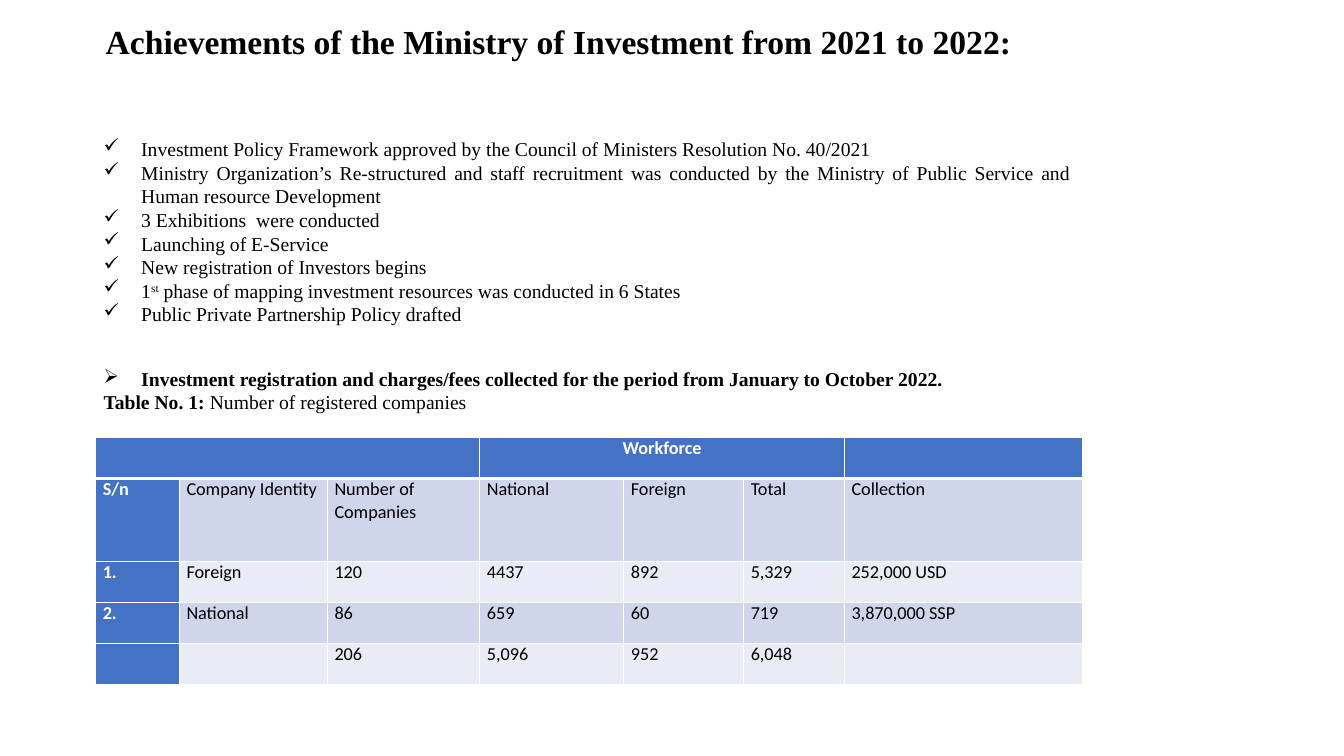
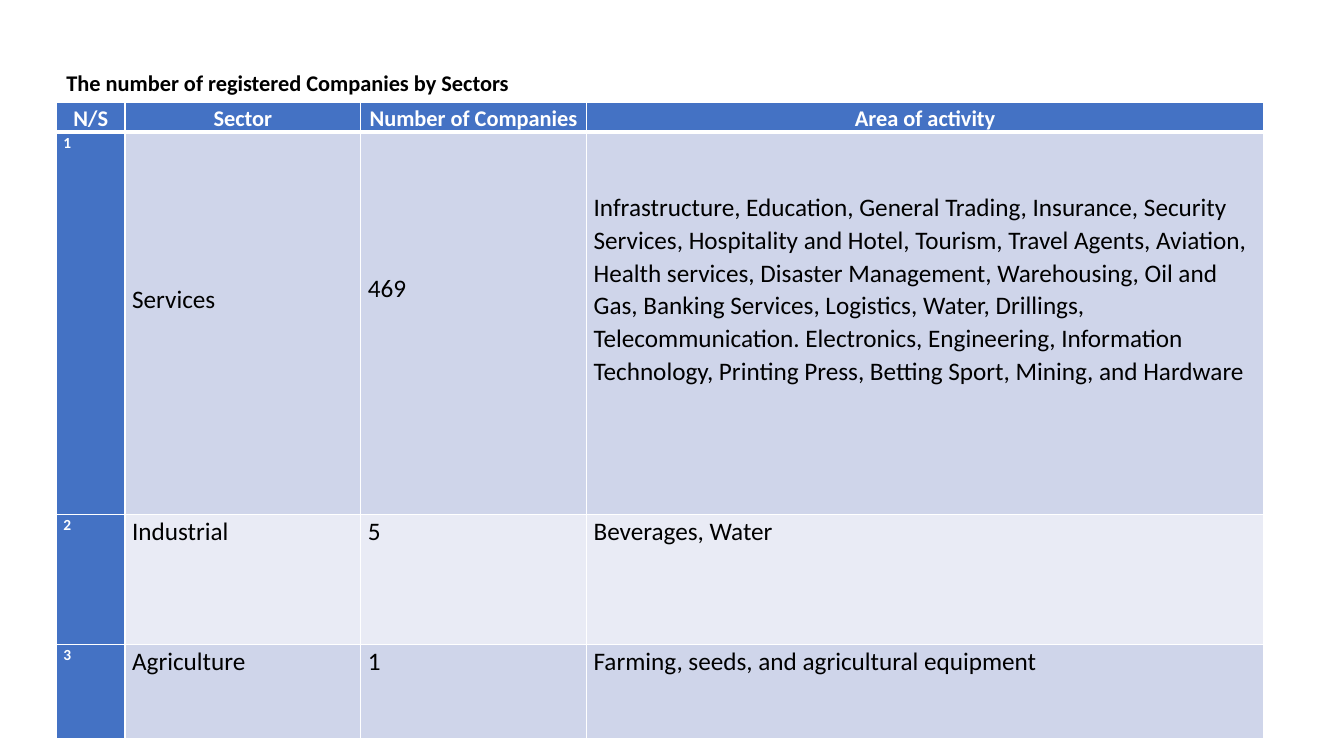
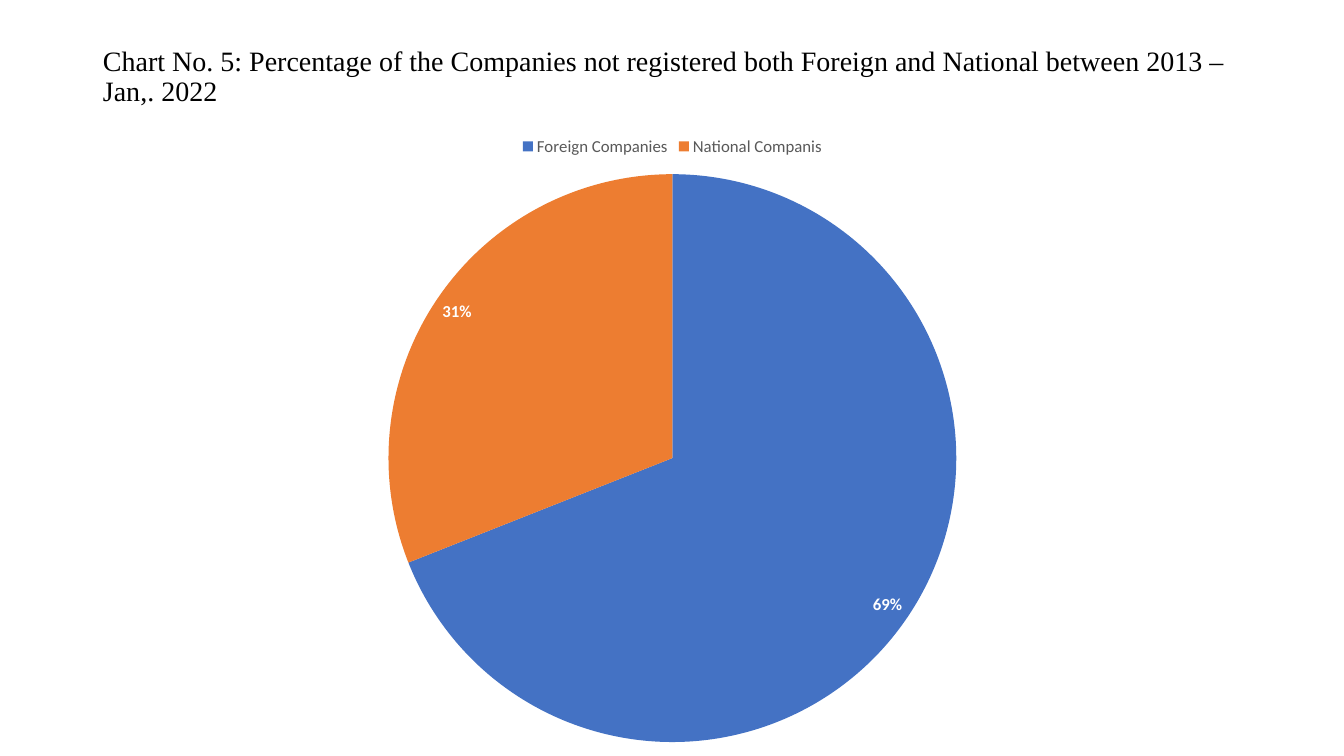
from lxml import etree
from pptx import Presentation
from pptx.chart.data import CategoryChartData
from pptx.dml.color import RGBColor
from pptx.enum.chart import XL_CHART_TYPE, XL_LABEL_POSITION, XL_LEGEND_POSITION
from pptx.enum.text import MSO_ANCHOR, MSO_AUTO_SIZE, PP_ALIGN
from pptx.oxml.ns import qn
from pptx.util import Cm, Pt

LEFT, CENTER, JUSTIFY = PP_ALIGN.LEFT, PP_ALIGN.CENTER, PP_ALIGN.JUSTIFY
TOP, MIDDLE = MSO_ANCHOR.TOP, MSO_ANCHOR.MIDDLE
NO_AUTOFIT = MSO_AUTO_SIZE.NONE
PIE = XL_CHART_TYPE.PIE
LEGEND_TOP = XL_LEGEND_POSITION.TOP
INSIDE_END = XL_LABEL_POSITION.INSIDE_END

SERIF, SANS = "Times New Roman", "Calibri"
BLACK, WHITE, GRAY = "000000", "FFFFFF", "595959"
BLUE, ORANGE = "4472C4", "ED7D31"
BANDS = ("CFD5EA", "E9EBF5")
TITLE_ONLY = 5
CHECK, ARROW = "✓", "➢"


def color(value):
    return RGBColor.from_string(value)


def style_font(font, size, name=SANS, fill=BLACK, bold=False):
    font.size = Pt(size)
    font.name = name
    font.bold = bold
    font.color.rgb = color(fill)


def add_bullet(paragraph, symbol):
    """Give the paragraph a hanging indent and a symbol bullet."""
    properties = paragraph._p.get_or_add_pPr()
    properties.set("marL", str(Cm(0.95)))
    properties.set("indent", str(-Cm(0.95)))
    etree.SubElement(properties, qn("a:buChar"), char=symbol)


def add_border(cell, side, width):
    line = etree.SubElement(cell._tc.get_or_add_tcPr(), qn(f"a:ln{side}"), w=str(Pt(width)))
    fill = etree.SubElement(line, qn("a:solidFill"))
    etree.SubElement(fill, qn("a:srgbClr"), val=WHITE)


class Deck:
    """Shared style and the slide being built."""

    def __init__(self):
        self.presentation = Presentation()
        self.presentation.slide_width = Cm(33.87)
        self.presentation.slide_height = Cm(19.05)
        self.slide = None

    def add_slide(self, title, box, size, name=SERIF, bold=False):
        layout = self.presentation.slide_layouts[TITLE_ONLY]
        self.slide = self.presentation.slides.add_slide(layout)
        shape = self.slide.shapes.title
        shape.left, shape.top, shape.width, shape.height = map(Cm, box)
        text_frame = shape.text_frame
        text_frame.text = title
        text_frame.word_wrap = True
        text_frame.auto_size = NO_AUTOFIT
        text_frame.vertical_anchor = MIDDLE
        paragraph = text_frame.paragraphs[0]
        paragraph.alignment = LEFT
        paragraph.line_spacing = 0.9
        style_font(paragraph.runs[0].font, size, name, bold=bold)

    def add_text(self, box, items, size):
        """Each item is (bullet, alignment, space before, runs of (text, bold, baseline))."""
        text_frame = self.slide.shapes.add_textbox(*map(Cm, box)).text_frame
        text_frame.word_wrap = True
        text_frame.vertical_anchor = MIDDLE
        for index, (bullet, alignment, space, runs) in enumerate(items):
            paragraph = text_frame.add_paragraph() if index else text_frame.paragraphs[0]
            paragraph.alignment = alignment
            paragraph.space_before = Pt(space)
            if bullet:
                add_bullet(paragraph, bullet)
            for text, bold, baseline in runs:
                run = paragraph.add_run()
                run.text = text
                style_font(run.font, size, SERIF, bold=bold)
                if baseline:
                    run._r.get_or_add_rPr().set("baseline", str(baseline * 1000))

    def add_table(self, corner, widths, heights, rows, sizes, spacing=1.0, offsets=None):
        """sizes holds the header, first column and body text sizes;
        offsets maps (row, column) to a top margin in cm."""
        left, top = map(Cm, corner)
        table = self.slide.shapes.add_table(
            len(rows), len(widths), left, top, Cm(sum(widths)), Cm(sum(heights))).table
        table.horz_banding = False
        for column, width in zip(table.columns, widths):
            column.width = Cm(width)
        for row, height in zip(table.rows, heights):
            row.height = Cm(height)
        header_size, key_size, body_size = sizes
        for row_index, row in enumerate(rows):
            for column_index, text in enumerate(row):
                cell = table.cell(row_index, column_index)
                header, key = row_index == 0, column_index == 0
                # Borders go before the fill in the cell properties
                for side, width in (("L", 1), ("R", 1), ("T", 3 if row_index == 1 else 1),
                                    ("B", 3 if header else 1)):
                    add_border(cell, side, width)
                cell.fill.solid()
                cell.fill.fore_color.rgb = color(
                    BLUE if header or key else BANDS[(row_index - 1) % 2])
                cell.margin_left = cell.margin_right = Cm(0.18)
                cell.margin_top = Cm((offsets or {}).get((row_index, column_index), 0))
                cell.margin_bottom = 0
                cell.vertical_anchor = TOP
                cell.text_frame.text = text
                paragraph = cell.text_frame.paragraphs[0]
                paragraph.alignment = CENTER if header else LEFT
                paragraph.line_spacing = spacing
                strong = header or key
                size = header_size if header else key_size if key else body_size
                for run in paragraph.runs:
                    style_font(run.font, size, fill=WHITE if strong else BLACK, bold=strong)
        return table

    def add_pie(self, box, name, values, fills):
        data = CategoryChartData()
        data.categories = list(values)
        data.add_series(name, list(values.values()))
        chart = self.slide.shapes.add_chart(PIE, *map(Cm, box), data).chart
        style_font(chart.font, 10)
        chart.has_title = False
        chart.has_legend = True
        chart.legend.position = LEGEND_TOP
        chart.legend.include_in_layout = False
        style_font(chart.legend.font, 12, fill=GRAY)
        plot = chart.plots[0]
        plot.vary_by_categories = True
        for index, fill in enumerate(fills):
            point_fill = plot.series[0].points[index].format.fill
            point_fill.solid()
            point_fill.fore_color.rgb = color(fill)
        plot.has_data_labels = True
        labels = plot.data_labels
        labels.show_percentage = True
        labels.show_value = False
        labels.number_format = "0%"
        labels.number_format_is_linked = False
        labels.position = INSIDE_END
        style_font(labels.font, 12, fill=WHITE, bold=True)


def plain(text, bold=False):
    return (text, bold, 0)


def main():
    deck = Deck()

    # Achievements and registered companies
    deck.add_slide("Achievements of the Ministry of Investment from 2021 to 2022:",
                   (2.41, 0, 29.21, 2.21), 24, bold=True)
    achievements = [
        (JUSTIFY, [plain("Investment Policy Framework approved by the Council of Ministers "
                         "Resolution No. 40/2021")]),
        (JUSTIFY, [plain("Ministry Organization’s Re-structured and staff recruitment was conducted "
                         "by the Ministry of Public Service and Human resource Development")]),
        (LEFT, [plain("3 Exhibitions  were conducted")]),
        (LEFT, [plain("Launching of E-Service")]),
        (LEFT, [plain("New registration of Investors begins")]),
        (LEFT, [plain("1"), ("st", False, 30),
                plain(" phase of mapping investment resources was conducted in 6 States")]),
        (LEFT, [plain("Public Private Partnership Policy drafted")]),
    ]
    items = [(CHECK, alignment, 0, runs) for alignment, runs in achievements]
    items += [
        (ARROW, LEFT, 29.5, [plain("Investment registration and charges/fees collected for the "
                                   "period from January to October 2022.", True)]),
        (None, LEFT, 0, [plain("Table No. 1:", True), plain(" Number of registered companies")]),
    ]
    deck.add_text((2.36, 3.3, 24.89, 7.29), items, 14)
    table = deck.add_table(
        (2.41, 11.02), (2.11, 3.73, 3.84, 3.63, 3.02, 2.54, 5.99),
        (1.04, 2.08, 1.04, 1.04, 1.04),
        [("", "", "", "Workforce", "", "", ""),
         ("S/n", "Company Identity", "Number of Companies", "National", "Foreign", "Total",
          "Collection"),
         ("1.", "Foreign", "120", "4437", "892", "5,329", "252,000 USD"),
         ("2.", "National", "86", "659", "60", "719", "3,870,000 SSP"),
         ("", "", "206", "5,096", "952", "6,048", "")],
        (13, 13, 13))
    for first in (0, 3):
        table.cell(0, first).merge(table.cell(0, first + 2))

    # Companies by sector
    deck.add_slide("The number of registered Companies by Sectors",
                   (1.42, 1.65, 28.19, 0.94), 16, SANS, bold=True)
    deck.add_table(
        (1.42, 2.59), (1.73, 5.94, 5.69, 17.07), (0.74, 9.63, 3.28, 2.36),
        [("N/S", "Sector", "Number of Companies", "Area of activity"),
         ("1", "Services", "469",
          "Infrastructure, Education, General Trading, Insurance, Security Services, Hospitality "
          "and Hotel, Tourism, Travel Agents, Aviation, Health services, Disaster Management, "
          "Warehousing, Oil and Gas, Banking Services, Logistics, Water, Drillings, "
          "Telecommunication. Electronics, Engineering, Information Technology, Printing Press, "
          "Betting Sport, Mining, and Hardware"),
         ("2", "Industrial", "5", "Beverages, Water"),
         ("3", "Agriculture", "1", "Farming, seeds, and agricultural equipment")],
        (16, 11, 18), 1.07, {(1, 1): 3.78, (1, 2): 3.5, (1, 3): 1.46})

    # Companies not registered
    deck.add_slide("Chart No. 5: Percentage of the Companies not registered both Foreign and "
                   "National between 2013 – Jan,. 2022", (2.34, 1.02, 29.21, 1.85), 20)
    deck.add_pie((2.34, 3.15, 29.21, 15.9), "Series 1",
                 {"Foreign Companies": 69, "National Companis": 31}, (BLUE, ORANGE))

    deck.presentation.save("out.pptx")


if __name__ == "__main__":
    main()
